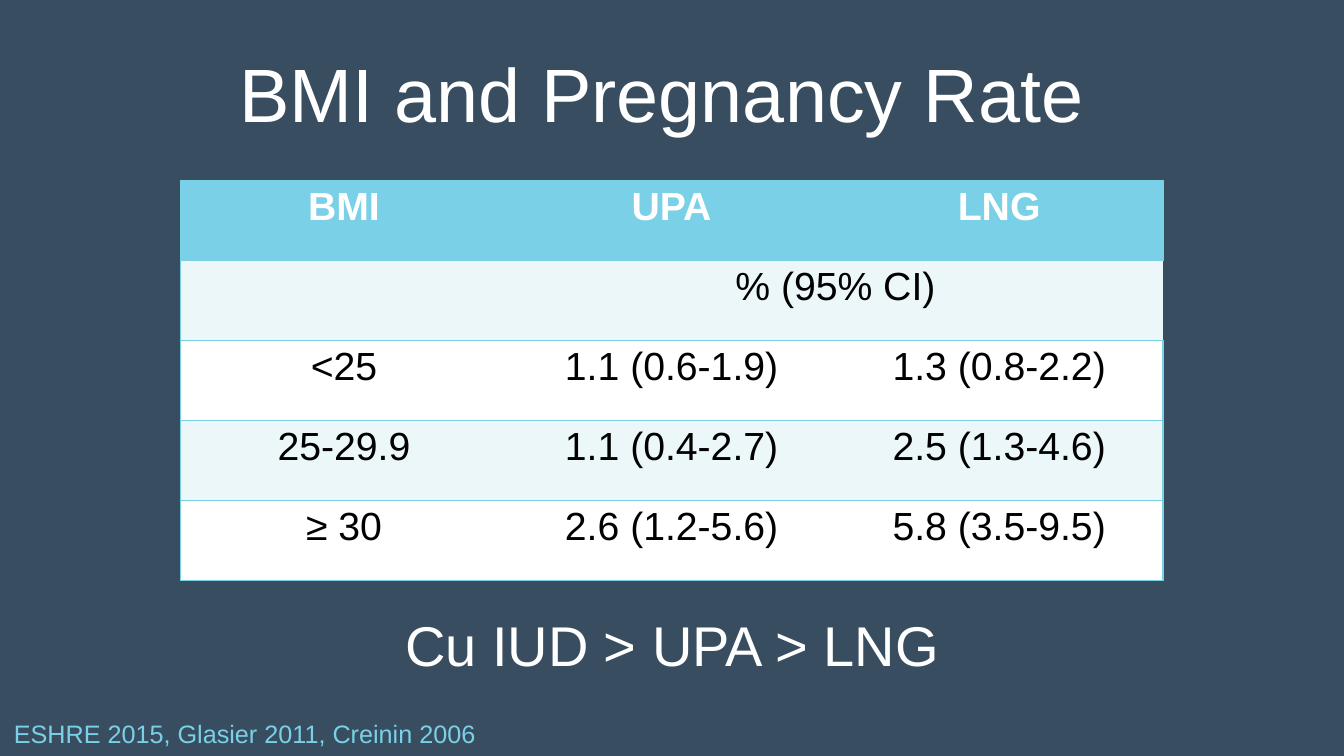
from lxml.etree import SubElement
from pptx import Presentation
from pptx.dml.color import RGBColor
from pptx.enum.text import MSO_ANCHOR, PP_ALIGN
from pptx.oxml.ns import qn
from pptx.util import Cm, Pt

NAVY = RGBColor(0x38, 0x4D, 0x60)
SKY = RGBColor(0x7A, 0xD0, 0xE7)
PALE = RGBColor(0xEC, 0xF7, 0xFA)
WHITE = RGBColor(0xFF, 0xFF, 0xFF)
BLACK = RGBColor(0x00, 0x00, 0x00)

RATES = [
    ["BMI", "UPA", "LNG"],
    ["", "% (95% CI)", ""],
    ["<25", "1.1 (0.6-1.9)", "1.3 (0.8-2.2)"],
    ["25-29.9", "1.1 (0.4-2.7)", "2.5 (1.3-4.6)"],
    ["≥ 30", "2.6 (1.2-5.6)", "5.8 (3.5-9.5)"],
]


def write(frame, text, size, color, bold=False, align=PP_ALIGN.CENTER, spacing=None):
    paragraph = frame.paragraphs[0]
    paragraph.alignment = align
    paragraph.line_spacing = spacing
    run = paragraph.add_run()
    run.text = text
    run.font.name = "Arial"
    run.font.size = Pt(size)
    run.font.bold = bold
    run.font.color.rgb = color


def add_text(slide, text, left, top, width, height, wrap=True,
             anchor=MSO_ANCHOR.TOP, **text_format):
    box = slide.shapes.add_textbox(Cm(left), Cm(top), Cm(width), Cm(height))
    box.text_frame.word_wrap = wrap
    box.text_frame.vertical_anchor = anchor
    write(box.text_frame, text, **text_format)


def set_border(cell, side, color=None):
    properties = cell._tc.get_or_add_tcPr()
    line = SubElement(properties, qn(f"a:ln{side}"), w=str(Pt(1)))
    if color is None:
        SubElement(line, qn("a:noFill"))
    else:
        fill = SubElement(line, qn("a:solidFill"))
        SubElement(fill, qn("a:srgbClr"), val=str(color))


def format_cell(cell, text, row, column, last_column):
    set_border(cell, "L", SKY if column == 0 else None)
    set_border(cell, "R", SKY if column == last_column else None)
    set_border(cell, "T", SKY)
    set_border(cell, "B", SKY)
    header = row == 0
    cell.fill.solid()
    cell.fill.fore_color.rgb = SKY if header else PALE if row % 2 else WHITE
    if text:
        write(cell.text_frame, text, 28, WHITE if header else BLACK, bold=header)


def add_rate_table(slide, left, top, width, height):
    last_column = len(RATES[0]) - 1
    frame = slide.shapes.add_table(
        len(RATES), last_column + 1, Cm(left), Cm(top), Cm(width), Cm(height))
    table = frame.table
    table.horz_banding = False
    for row, values in enumerate(RATES):
        for column, text in enumerate(values):
            format_cell(table.cell(row, column), text, row, column, last_column)
    table.cell(1, 1).merge(table.cell(1, last_column))


def main():
    presentation = Presentation()
    presentation.slide_width = Cm(33.87)
    presentation.slide_height = Cm(19.05)
    slide = presentation.slides.add_slide(presentation.slide_layouts[6])
    slide.background.fill.solid()
    slide.background.fill.fore_color.rgb = NAVY

    add_text(slide, "BMI and Pregnancy Rate ", 0, 0.64, 33.87, 3.68,
             anchor=MSO_ANCHOR.MIDDLE, size=54, color=WHITE, spacing=0.9)
    add_text(slide, "Cu IUD > UPA > LNG", 2.33, 15.44, 29.21, 1.7,
             size=40, color=WHITE, spacing=0.9)
    add_rate_table(slide, 4.54, 4.54, 24.77, 10.08)
    add_text(slide, "ESHRE 2015, Glasier 2011, Creinin 2006", 0.1, 17.98, 12.27, 1.02,
             wrap=False, size=18, color=SKY, align=PP_ALIGN.LEFT)
    presentation.save("out.pptx")


if __name__ == "__main__":
    main()
